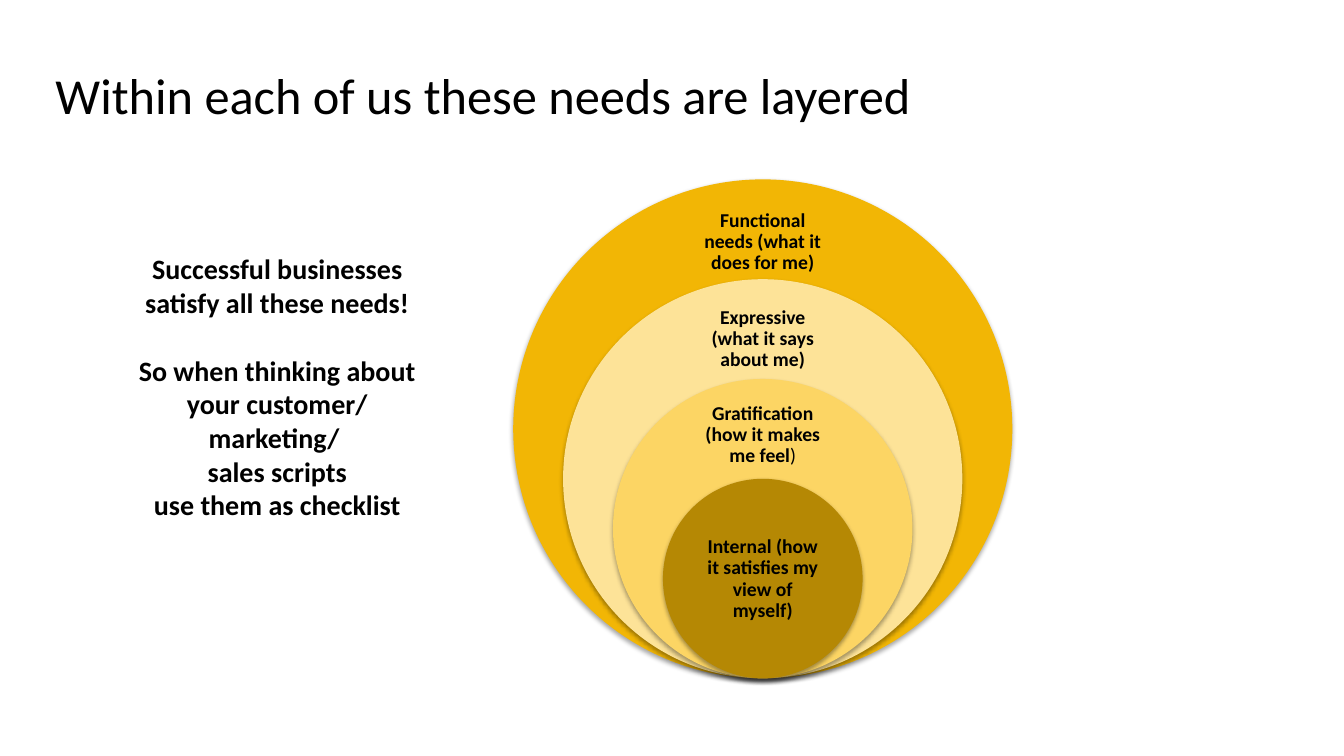
from dataclasses import dataclass

from lxml import etree
from pptx import Presentation
from pptx.dml.color import RGBColor
from pptx.enum import shapes, text
from pptx.oxml import ns
from pptx.util import Inches, Pt

FONT = "Calibri"
BLACK = "000000"
CENTER_X, BOTTOM = 7.565, 6.73
OUTER_DIAMETER, DIAMETER_STEP = 4.95, 0.99
LABEL_WIDTH = 1.39


@dataclass
class Ring:
    color: str
    label_top: float
    label_height: float
    label: str
    plain_end: str = ""


RINGS = [
    Ring("F2B605", 2.03, 0.74, "Functional needs (what it does for me)"),
    Ring("FDE398", 3.01, 0.71, "Expressive (what it says about me)"),
    Ring("FCD564", 3.98, 0.67, "Gratification (how it makes me feel", ")"),
    Ring("B58804", 5.25, 0.99, "Internal (how it satisfies my view of myself)"),
]

ADVICE = [
    "Successful businesses satisfy all these needs!",
    "So when thinking about your customer/ marketing/ ",
    "sales scripts",
    "use them as checklist",
]


def rgb(color: str) -> RGBColor:
    return RGBColor.from_string(color)


def add_run(p, words: str, size: float, bold: bool) -> None:
    r = p.add_run()
    r.text = words
    for name, value in {"name": FONT, "size": Pt(size), "bold": bold}.items():
        setattr(r.font, name, value)
    r.font.color.rgb = rgb(BLACK)


def format_frame(tf, anchor, side: float, edge: float) -> None:
    formats = {
        "word_wrap": True,
        "auto_size": text.MSO_AUTO_SIZE.NONE,
        "vertical_anchor": anchor,
        "margin_left": Inches(side),
        "margin_right": Inches(side),
        "margin_top": Inches(edge),
        "margin_bottom": Inches(edge),
    }
    for name, value in formats.items():
        setattr(tf, name, value)


def add_shadow(sp) -> None:
    sp.shadow.inherit = False
    effects = sp._element.spPr.find(ns.qn("a:effectLst"))
    shadow = etree.SubElement(
        effects, ns.qn("a:outerShdw"), blurRad=str(Pt(3.1)), dist=str(Pt(1.8)),
        dir=str(90 * 60000), rotWithShape="0")
    color = etree.SubElement(shadow, ns.qn("a:srgbClr"), val=BLACK)
    etree.SubElement(color, ns.qn("a:alpha"), val="35000")


def add_ring(s, ring: Ring, diameter: float) -> None:
    sp = s.shapes.add_shape(
        shapes.MSO_SHAPE.OVAL, Inches(CENTER_X - diameter / 2),
        Inches(BOTTOM - diameter), Inches(diameter), Inches(diameter))
    sp.fill.solid()
    sp.fill.fore_color.rgb = rgb(ring.color)
    sp.line.fill.background()
    add_shadow(sp)

    label = s.shapes.add_textbox(
        Inches(CENTER_X - LABEL_WIDTH / 2), Inches(ring.label_top),
        Inches(LABEL_WIDTH), Inches(ring.label_height))
    format_frame(label.text_frame, text.MSO_ANCHOR.MIDDLE, 0.11, 0.11)
    p = label.text_frame.paragraphs[0]
    p.alignment = text.PP_ALIGN.CENTER
    p.line_spacing = 0.9
    add_run(p, ring.label, 14, True)
    if ring.plain_end:
        add_run(p, ring.plain_end, 14, False)


def add_title(s, words: str) -> None:
    sp = s.shapes.title
    sp.left, sp.top, sp.width, sp.height = map(Inches, (0.45, 0.31, 9, 1.25))
    format_frame(sp.text_frame, text.MSO_ANCHOR.MIDDLE, 0.1, 0.05)
    p = sp.text_frame.paragraphs[0]
    p.alignment = text.PP_ALIGN.LEFT
    add_run(p, words, 36, False)


def add_advice(s, lines: list[str]) -> None:
    sp = s.shapes.add_textbox(*map(Inches, (1.2, 2.45, 3.1, 2.79)))
    tf = sp.text_frame
    format_frame(tf, text.MSO_ANCHOR.TOP, 0.1, 0.05)
    tf.auto_size = text.MSO_AUTO_SIZE.SHAPE_TO_FIT_TEXT
    for i, line in enumerate(lines):
        p = tf.add_paragraph() if i else tf.paragraphs[0]
        p.alignment = text.PP_ALIGN.CENTER
        # The second thought starts one line lower
        if i == 1:
            p.space_before = Pt(24.4)
        add_run(p, line, 20, True)


def main() -> None:
    prs = Presentation()
    prs.slide_width, prs.slide_height = Inches(13.33), Inches(7.5)
    s = prs.slides.add_slide(prs.slide_layouts[5])

    # Title
    add_title(s, "Within each of us these needs are layered")

    # Nested needs, resting on a common bottom point
    for i, ring in enumerate(RINGS):
        add_ring(s, ring, OUTER_DIAMETER - i * DIAMETER_STEP)

    # Advice on the left
    add_advice(s, ADVICE)

    prs.save("out.pptx")


if __name__ == "__main__":
    main()
